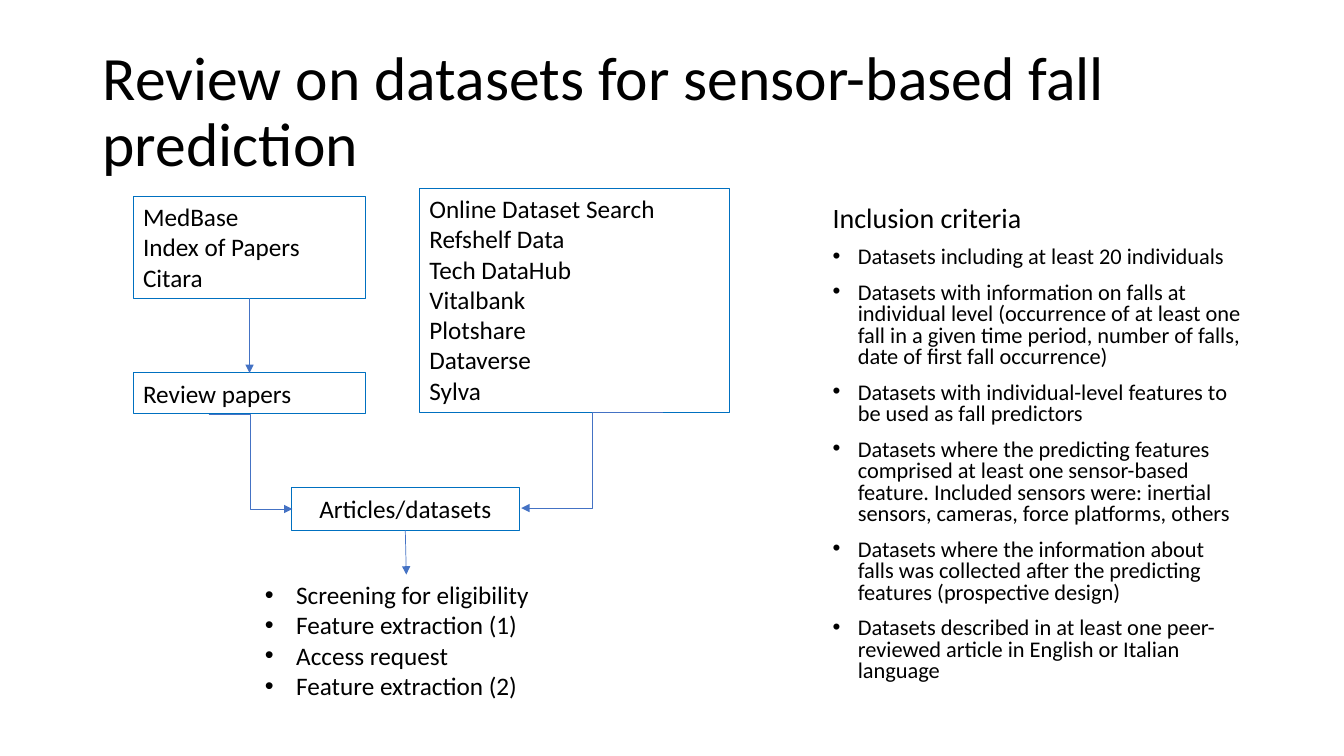
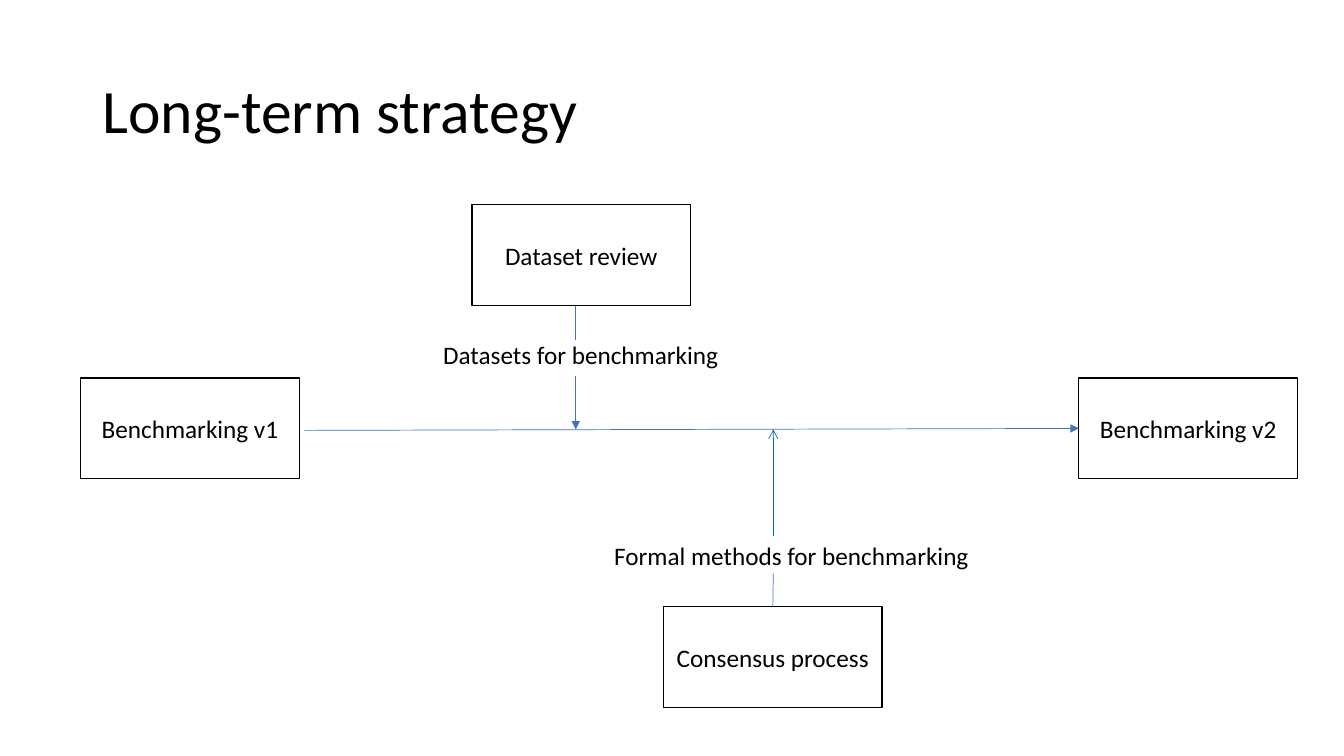
from pptx import Presentation
from pptx.dml.color import RGBColor
from pptx.enum.shapes import MSO_CONNECTOR, MSO_SHAPE
from pptx.enum.text import MSO_ANCHOR, PP_ALIGN
from pptx.oxml.ns import qn
from pptx.util import Inches, Pt
from lxml import etree

RECTANGLE = MSO_SHAPE.RECTANGLE
STRAIGHT, ELBOW = MSO_CONNECTOR.STRAIGHT, MSO_CONNECTOR.ELBOW
TOP, MIDDLE = MSO_ANCHOR.TOP, MSO_ANCHOR.MIDDLE
LEFT, CENTER = PP_ALIGN.LEFT, PP_ALIGN.CENTER
TOP_SIDE, LEFT_SIDE, BOTTOM_SIDE = 0, 1, 2

FONT = "Calibri"
BLACK, BLUE, ARROW_BLUE = "000000", "0070C0", "4472C4"
TITLE = dict(at=(0.92, 0.4, 11.5, 1.45), size=44, anchor=MIDDLE, spacing=0.9)


def add_text(page, lines, at, size=18, align=LEFT, anchor=TOP, spacing=1.0,
             before=0, indent=0, heading_size=None, outline=None, outline_width=0.75):
    """Add lines as paragraphs, in an outlined rectangle if outline is given.

    With heading_size, the first line is a heading without a bullet.
    """
    place = [Inches(length) for length in at]
    if outline:
        box = page.shapes.add_shape(RECTANGLE, *place)
        box.shadow.inherit = False
        box.fill.background()
        box.line.color.rgb = RGBColor.from_string(outline)
        box.line.width = Pt(outline_width)
    else:
        box = page.shapes.add_textbox(*place)
    frame = box.text_frame
    frame.word_wrap = True
    frame.vertical_anchor = anchor
    for index, line in enumerate(lines):
        para = frame.paragraphs[0] if index == 0 else frame.add_paragraph()
        is_heading = index == 0 and heading_size is not None
        para.alignment = align
        para.line_spacing = spacing
        para.space_before = Pt(before if index else 0)
        if indent and not is_heading:
            properties = para._p.get_or_add_pPr()
            properties.set("marL", str(Inches(indent)))
            properties.set("indent", str(-Inches(indent)))
            etree.SubElement(properties, qn("a:buFont"), typeface="Arial")
            etree.SubElement(properties, qn("a:buChar"), char="•")
        span = para.add_run()
        span.text = line
        span.font.name = FONT
        span.font.size = Pt(heading_size if is_heading else size)
        span.font.color.rgb = RGBColor.from_string(BLACK)
    return box


def add_line(page, start, end, kind=STRAIGHT, color=ARROW_BLUE, arrow="triangle",
             begin_box=None, end_box=None, end_side=TOP_SIDE):
    """Join two points; boxes, where given, take hold of the ends."""
    line = page.shapes.add_connector(kind, *[Inches(value) for value in start + end])
    if begin_box is not None:
        line.begin_connect(begin_box, BOTTOM_SIDE)
    if end_box is not None:
        line.end_connect(end_box, end_side)
    line.line.color.rgb = RGBColor.from_string(color)
    line.line.width = Pt(0.5)
    if arrow:
        etree.SubElement(line.line._get_or_add_ln(), qn("a:tailEnd"), type=arrow)
    etree.SubElement(line._element.spPr, qn("a:effectLst"))


deck = Presentation()
deck.slide_width, deck.slide_height = Inches(13.33), Inches(7.5)
blank = deck.slide_layouts[6]

# Slide 1: review
page = deck.slides.add_slide(blank)
add_text(page, ["Review on datasets for sensor-based fall prediction"], **TITLE)

add_text(page, [
    "Inclusion criteria",
    "Datasets including at least 20 individuals",
    "Datasets with information on falls at individual level (occurrence of at least one "
    "fall in a given time period, number of falls, date of first fall occurrence)",
    "Datasets with individual-level features to be used as fall predictors",
    "Datasets where the predicting features comprised at least one sensor-based feature. "
    "Included sensors were: inertial sensors, cameras, force platforms, others",
    "Datasets where the information about falls was collected after the predicting "
    "features (prospective design)",
    "Datasets described in at least one peer-reviewed article in English or Italian language",
], (8.16, 2, 4.26, 5.24), size=16, heading_size=20, spacing=0.8, before=10, indent=0.25)

# Search flow
articles = add_text(page, ["Articles/datasets"], (2.89, 4.84, 2.26, 0.42),
                    align=CENTER, outline=BLUE)
literature = add_text(page, ["MedBase", "Index of Papers", "Citara"],
                      (1.32, 1.95, 2.31, 1.01), outline=BLUE)
reviews = add_text(page, ["Review papers"], (1.32, 3.7, 2.31, 0.4), outline=BLUE)
add_text(page, ["Online Dataset Search", "Refshelf Data", "Tech DataHub", "Vitalbank",
                "Plotshare", "Dataverse", "Sylva"],
         (4.16, 1.87, 3.08, 2.22), outline=BLUE)
steps = add_text(page, ["Screening for eligibility", "Feature extraction (1)",
                        "Access request", "Feature extraction (2)"],
                 (2.53, 5.7, 3, 1.31), indent=0.31)

add_line(page, (2.48, 2.96), (2.48, 3.7), begin_box=literature, end_box=reviews)
add_line(page, (2.07, 4.11), (2.9, 5.05), kind=ELBOW)
add_line(page, (6.58, 4.09), (5.17, 5.04), kind=ELBOW)
add_line(page, (4.02, 5.26), (4.03, 5.7), begin_box=articles, end_box=steps)

# Slide 2: strategy
page = deck.slides.add_slide(blank)
add_text(page, ["Long-term strategy"], **TITLE)

stages = {}
for name, left, top in [("Dataset review", 4.68, 2.03), ("Benchmarking v1", 0.8, 3.75),
                        ("Consensus process", 6.58, 6.02), ("Benchmarking v2", 10.7, 3.75)]:
    stages[name] = add_text(page, [name], (left, top, 2.17, 1), align=CENTER,
                            anchor=MIDDLE, outline=BLACK, outline_width=1)

# Arrow labels
add_text(page, ["Datasets for benchmarking"], (4.26, 3.32, 3, 0.4), align=CENTER)
add_text(page, ["Formal methods for benchmarking"], (5.98, 5.31, 3.74, 0.4), align=CENTER)

# Timeline and its two inputs
review_x, consensus_x = 5.71, 7.67
add_line(page, (3.02, 4.27), (10.7, 4.25), end_box=stages["Benchmarking v2"],
         end_side=LEFT_SIDE)
add_line(page, (review_x, 3.04), (review_x, 3.37), arrow=None)
add_line(page, (review_x, 3.73), (review_x, 4.26))
add_line(page, (consensus_x, 5.69), (consensus_x, 6.02), arrow=None,
         end_box=stages["Consensus process"])
add_line(page, (consensus_x, 5.32), (consensus_x, 4.26), color=BLUE, arrow="arrow")

deck.save("out.pptx")
